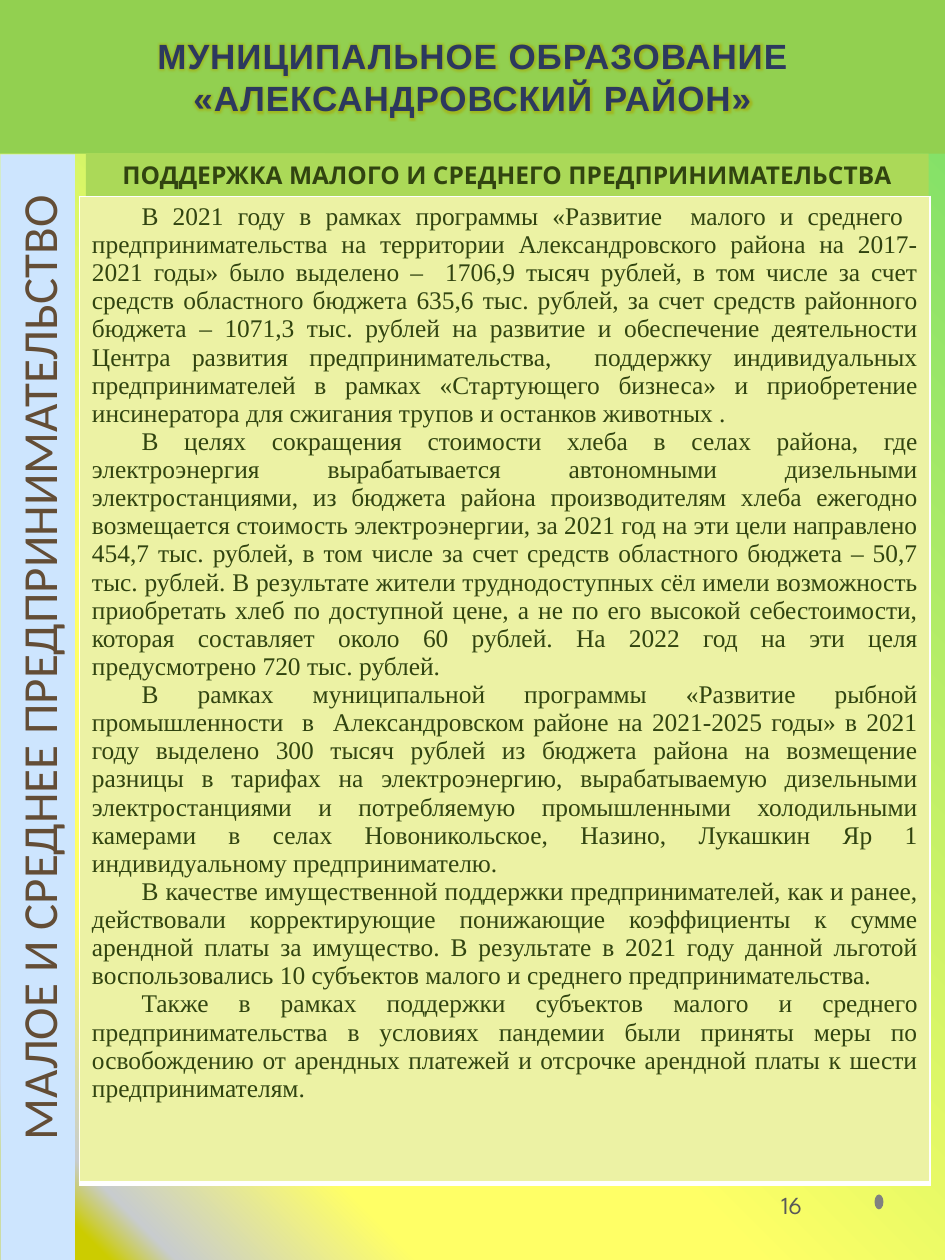
from lxml.etree import SubElement
from pptx import Presentation
from pptx.dml.color import RGBColor
from pptx.enum.shapes import MSO_SHAPE
from pptx.enum.text import MSO_ANCHOR, PP_ALIGN
from pptx.oxml import parse_xml
from pptx.oxml.ns import nsdecls, qn
from pptx.util import Cm, Pt

COLORS = {
    "head": "92D050", "title": "2C395E", "edge": "0A290A", "glow": "A8A800",
    "side": "CDE5FE", "brown": "634D36", "band": "ABD958", "text": "314410",
    "cell": "ECF2A4", "line": "FFFFFF", "dot": "808080", "page": "595959",
}
STOPS = [(5, "CCCC00"), (8, "C8CCCE"), (19, "FFFF66"),
         (34, "FFFF66"), (95, "81E068"), (100, "9ED563")]
BODY = [
    "В 2021 году в рамках программы «Развитие  малого и среднего  предпринимательства "
    "на территории Александровского района на 2017-2021 годы» было выделено –  1706,9 "
    "тысяч рублей, в том числе за счет средств областного бюджета 635,6 тыс. рублей, за "
    "счет средств районного бюджета – 1071,3 тыс. рублей на развитие и обеспечение "
    "деятельности Центра развития предпринимательства,  поддержку индивидуальных "
    "предпринимателей в рамках «Стартующего бизнеса» и приобретение инсинератора для "
    "сжигания трупов и останков животных .",
    "В целях сокращения стоимости хлеба в селах района, где электроэнергия вырабатывается "
    "автономными дизельными электростанциями, из бюджета района производителям хлеба "
    "ежегодно возмещается стоимость электроэнергии, за 2021 год на эти цели направлено "
    "454,7 тыс. рублей, в том числе за счет средств областного бюджета – 50,7 тыс. рублей. "
    "В результате жители труднодоступных сёл имели возможность приобретать хлеб по "
    "доступной цене, а не по его высокой себестоимости, которая составляет около 60 рублей. "
    "На 2022 год на эти целя предусмотрено 720 тыс. рублей.",
    "В рамках муниципальной программы «Развитие рыбной промышленности  в  Александровском "
    "районе на 2021-2025 годы» в 2021 году выделено 300 тысяч рублей из бюджета района на "
    "возмещение разницы в тарифах на электроэнергию, вырабатываемую дизельными "
    "электростанциями и потребляемую промышленными холодильными камерами в селах "
    "Новоникольское, Назино, Лукашкин Яр 1 индивидуальному предпринимателю.",
    "В качестве имущественной поддержки предпринимателей, как и ранее, действовали "
    "корректирующие понижающие коэффициенты к сумме арендной платы за имущество. В "
    "результате в 2021 году данной льготой воспользовались 10 субъектов малого и среднего "
    "предпринимательства.",
    "Также в рамках поддержки субъектов малого и среднего предпринимательства в условиях "
    "пандемии были приняты меры по освобождению от арендных платежей и отсрочке арендной "
    "платы к шести предпринимателям.",
]


def add_box(kind, left, top, width, height, color):
    box = slide.shapes.add_shape(kind, Cm(left), Cm(top), Cm(width), Cm(height))
    box.shadow.inherit = False
    box.fill.solid()
    box.fill.fore_color.rgb = RGBColor.from_string(COLORS[color])
    box.line.fill.background()
    return box


def write(frame, lines, size, name, color, bold=False, align=PP_ALIGN.CENTER):
    frame.word_wrap = True
    frame.vertical_anchor = MSO_ANCHOR.MIDDLE
    frame.text = "\n".join(lines)
    for par in frame.paragraphs:
        par.alignment = align
        par.font.size = Pt(size)
        par.font.name = name
        par.font.bold = bold
        par.font.color.rgb = RGBColor.from_string(COLORS[color])


deck = Presentation()
deck.slide_width, deck.slide_height = Cm(19.05), Cm(25.4)
slide = deck.slides.add_slide(deck.slide_layouts[6])

back = slide.background.fill
back.gradient()
back.gradient_angle = 45
stops = next(slide.element.iter(qn("a:gsLst")))
for old in list(stops):
    stops.remove(old)
for place, color in STOPS:
    stop = SubElement(stops, qn("a:gs"), pos=str(place * 1000))
    SubElement(stop, qn("a:srgbClr"), val=color)

add_box(MSO_SHAPE.OVAL, 17.63, 24.08, 0.18, 0.3, "dot")

head = add_box(MSO_SHAPE.RECTANGLE, 0, 0, 19.05, 3.1, "head")
write(head.text_frame, ["МУНИЦИПАЛЬНОЕ ОБРАЗОВАНИЕ", "«АЛЕКСАНДРОВСКИЙ РАЙОН»"],
      20, "Arial", "title", True)
for par in head.text_frame.paragraphs:
    font = par.runs[0].font
    font.color.rgb = RGBColor.from_string(COLORS["title"])
    props = par.runs[0]._r.get_or_add_rPr()
    props.set("spc", "50")
    props.insert(0, parse_xml(
        f'<a:ln {nsdecls("a")} w="13500"><a:solidFill><a:srgbClr val="{COLORS["edge"]}">'
        '<a:alpha val="6500"/></a:srgbClr></a:solidFill></a:ln>'))
    props.insert(2, parse_xml(
        f'<a:effectLst {nsdecls("a")}><a:glow rad="63500"><a:srgbClr val="{COLORS["glow"]}">'
        '<a:alpha val="60000"/></a:srgbClr></a:glow></a:effectLst>'))

side = add_box(MSO_SHAPE.RECTANGLE, -10.39, 13.51, 22.3, 1.5, "side")
side.rotation = 270
side.text_frame.margin_left = Cm(1.85)
write(side.text_frame, ["МАЛОЕ И СРЕДНЕЕ ПРЕДПРИНИМАТЕЛЬСТВО"], 28, "Calibri", "brown")

page = slide.shapes.add_textbox(Cm(15.67), Cm(23.62), Cm(2.41), Cm(1.35))
page.text_frame.margin_left = Cm(0.08)
write(page.text_frame, ["16"], 14, "League Spartan", "page", align=PP_ALIGN.LEFT)

band = add_box(MSO_SHAPE.RECTANGLE, 1.73, 3.1, 16.99, 0.86, "band")
write(band.text_frame, ["ПОДДЕРЖКА МАЛОГО И СРЕДНЕГО ПРЕДПРИНИМАТЕЛЬСТВА"],
      14, "League Spartan", "text", True)

table = slide.shapes.add_table(1, 1, Cm(1.6), Cm(3.96), Cm(17.15), Cm(19.88)).table
table.first_row = table.horz_banding = False
cell = table.cell(0, 0)
write(cell.text_frame, BODY, 14.5, "Times New Roman", "text", align=PP_ALIGN.JUSTIFY)
cell.vertical_anchor = MSO_ANCHOR.TOP
for par in cell.text_frame.paragraphs:
    props = par._p.get_or_add_pPr()
    props.set("marL", "0")
    props.set("indent", str(Cm(1)))
props = cell._tc.get_or_add_tcPr()
for edge, width in [("L", 1), ("R", 1), ("T", 1), ("B", 3)]:
    line = SubElement(props, qn(f"a:ln{edge}"), w=str(Pt(width)))
    SubElement(SubElement(line, qn("a:solidFill")), qn("a:srgbClr"), val=COLORS["line"])
cell.fill.solid()
cell.fill.fore_color.rgb = RGBColor.from_string(COLORS["cell"])

deck.save("out.pptx")
